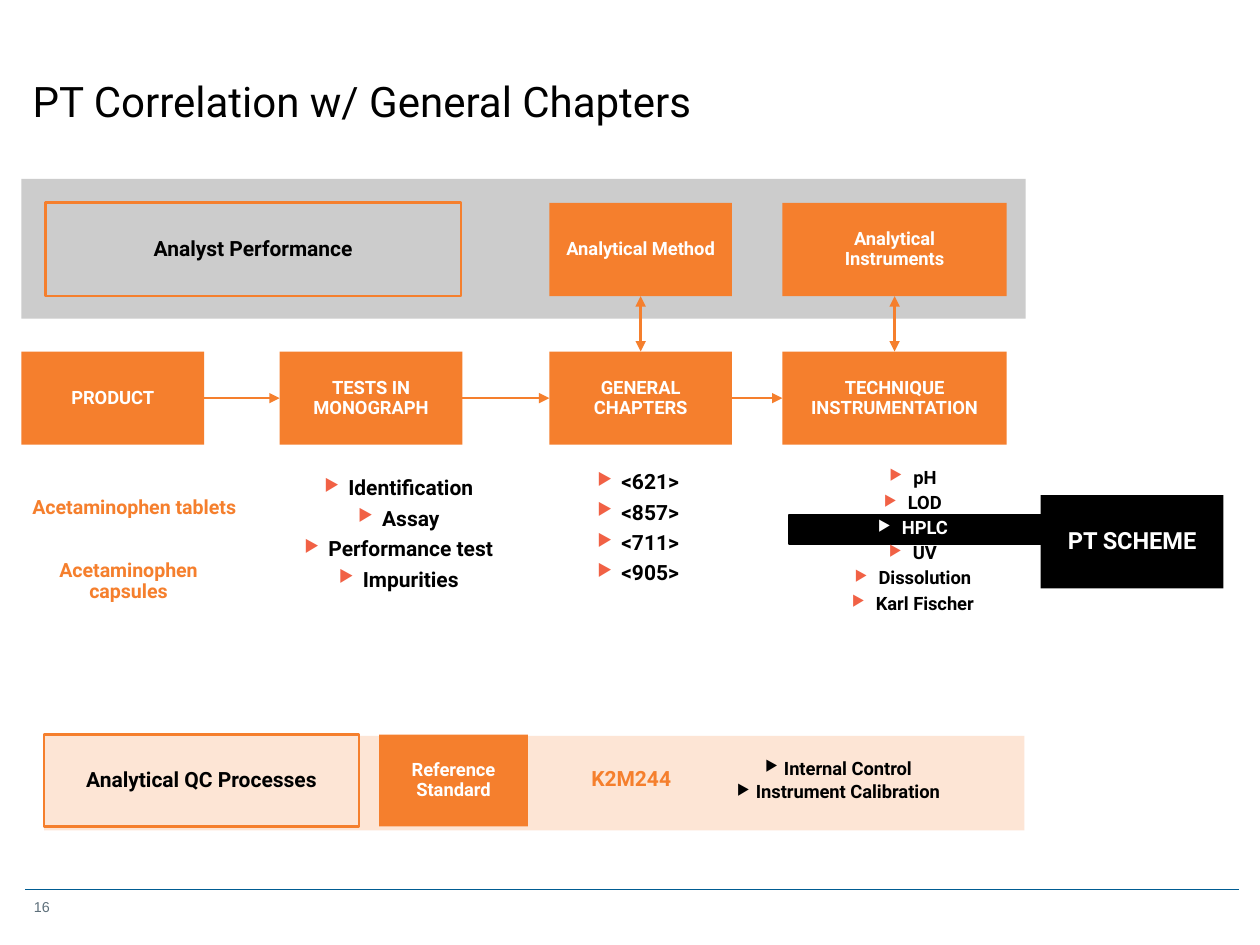
from itertools import pairwise

from pptx import Presentation, util as u
from pptx.dml.color import RGBColor
from pptx.enum import shapes, text
from pptx.oxml.ns import qn
from lxml import etree

ORANGE, CORAL, BLACK, WHITE = "F57F2D", "F16145", "000000", "FFFFFF"
TIGHT = (0.07, 0.04)
LOOSE = (0.1, 0.05)
TOP, LEFT, BOTTOM, RIGHT = range(4)


def rgb(value):
    return RGBColor.from_string(value)


def add_xml(parent, tag, **attrs):
    return etree.SubElement(parent, qn(tag), attrs)


class Deck:
    font = "Roboto"

    def __init__(self, prs):
        self.prs = prs
        self.s = prs.slides.add_slide(prs.slide_layouts[5])

    def frame(self, sp, inset, anchor, wrap=True):
        tf = sp.text_frame
        tf.word_wrap = wrap
        tf.vertical_anchor = anchor
        tf.margin_left = tf.margin_right = u.Inches(inset[0])
        tf.margin_top = tf.margin_bottom = u.Inches(inset[1])
        return tf

    def add_lines(self, tf, lines, size, color, bold=True, spacing=0.9,
                  align=text.PP_ALIGN.CENTER, font=None):
        for i, line in enumerate(lines):
            p = tf.paragraphs[0] if i == 0 else tf.add_paragraph()
            p.alignment = align
            p.line_spacing = spacing
            p.space_before = u.Pt(0)
            r = p.add_run()
            r.text = line
            r.font.name = font or self.font
            r.font.size = u.Pt(size)
            r.font.bold = bold
            r.font.color.rgb = rgb(color)

    def title(self, words, at):
        sp = self.s.shapes.title
        sp.left, sp.top, sp.width, sp.height = map(u.Inches, at)
        tf = self.frame(sp, LOOSE, text.MSO_ANCHOR.TOP)
        tf.auto_size = text.MSO_AUTO_SIZE.NONE
        self.add_lines(tf, [words], 24, BLACK, bold=False, spacing=1.0,
                       align=text.PP_ALIGN.LEFT)

    def box(self, at, lines=(), fill=None, line=None, width=1.5, size=10.5,
            color=WHITE, inset=TIGHT, wrap=True):
        sp = self.s.shapes.add_shape(shapes.MSO_SHAPE.RECTANGLE, *map(u.Inches, at))
        sp.shadow.inherit = False
        if fill:
            sp.fill.solid()
            sp.fill.fore_color.rgb = rgb(fill)
        else:
            sp.fill.background()
        if line:
            sp.line.color.rgb = rgb(line)
            sp.line.width = u.Pt(width)
        else:
            sp.line.fill.background()
        if lines:
            tf = self.frame(sp, inset, text.MSO_ANCHOR.MIDDLE, wrap)
            self.add_lines(tf, lines, size, color)
        return sp

    def label(self, at, words, size, color, anchor=text.MSO_ANCHOR.MIDDLE,
              inset=TIGHT, **style):
        sp = self.s.shapes.add_textbox(*map(u.Inches, at))
        self.add_lines(self.frame(sp, inset, anchor), [words], size, color, **style)

    def bullets(self, at, items, size, spacing=1.0, marker=CORAL, before=3,
                indent=(0.19, -0.19), anchor=text.MSO_ANCHOR.TOP, inset=LOOSE,
                highlight=None):
        sp = self.s.shapes.add_textbox(*map(u.Inches, at))
        tf = self.frame(sp, inset, anchor)
        self.add_lines(tf, items, size, BLACK, spacing=spacing)
        for i, (item, p) in enumerate(zip(items, tf.paragraphs)):
            p.space_before = u.Pt(before if i else 0)
            ppr = p._p.get_or_add_pPr()
            ppr.set("marL", str(u.Inches(indent[0])))
            ppr.set("indent", str(u.Inches(indent[1])))
            chosen = item == highlight
            add_xml(add_xml(ppr, "a:buClr"), "a:srgbClr", val=WHITE if chosen else marker)
            add_xml(ppr, "a:buSzPct", val="80000")
            add_xml(ppr, "a:buChar", char="▶")
            if chosen:
                p.runs[0].font.color.rgb = rgb(WHITE)

    def line(self, start, end, color, width):
        c = self.s.shapes.add_connector(
            shapes.MSO_CONNECTOR.STRAIGHT, *map(u.Inches, start + end))
        c.line.color.rgb = rgb(color)
        c.line.width = u.Pt(width)
        add_xml(c._element.spPr, "a:effectLst")
        return c

    def arrow(self, a, a_side, b, b_side, both=False):
        c = self.line((0, 0), (0, 0), ORANGE, 1.5)
        c.begin_connect(a, a_side)
        c.end_connect(b, b_side)
        ln = c._element.spPr.find(qn("a:ln"))
        if both:
            add_xml(ln, "a:headEnd", type="triangle")
        add_xml(ln, "a:tailEnd", type="triangle")


def main():
    prs = Presentation()
    prs.slide_width, prs.slide_height = u.Inches(10), u.Inches(7.5)
    d = Deck(prs)

    d.title("PT Correlation w/ General Chapters", (0.16, 0.55, 7.02, 0.52))
    d.line((0.2, 7.06), (9.83, 7.06), "005C92", 0.75)
    d.label((0.17, 7.08, 0.42, 0.24), "16", 8.2, "5E707B", text.MSO_ANCHOR.TOP,
            LOOSE, bold=False, spacing=1.0, align=text.PP_ALIGN.LEFT, font="Arial")

    d.box((0.35, 5.84, 7.78, 0.75), fill="FDE5D5")
    d.box((0.17, 1.42, 7.97, 1.11), fill="CCCCCC")

    height = 0.74
    columns = [(0.17, 1.45), (2.22, 1.45), (4.36, 1.45), (6.21, 1.78)]
    steps = [["PRODUCT"], ["TESTS IN MONOGRAPH"], ["GENERAL CHAPTERS"],
             ["TECHNIQUE", "INSTRUMENTATION"]]
    factors = [["Analytical Method"], ["Analytical", "Instruments"]]
    flow = [d.box((x, 2.79, w, height), lines, ORANGE)
            for (x, w), lines in zip(columns, steps)]
    upper = [d.box((x, 1.61, w, height), lines, ORANGE)
             for (x, w), lines in zip(columns[2:], factors)]
    for a, b in pairwise(flow):
        d.arrow(a, RIGHT, b, LEFT)
    for a, b in zip(upper, flow[2:]):
        d.arrow(a, BOTTOM, b, TOP, both=True)

    for at, heading in [((0.36, 1.61, 3.3, height), "Analyst Performance"),
                        ((0.35, 5.83, 2.5, 0.73), "Analytical QC Processes")]:
        d.box(at, [heading], line=ORANGE, size=12, color=BLACK, inset=LOOSE, wrap=False)

    d.label((0.17, 3.77, 1.79, 0.53), "Acetaminophen tablets", 11.2, ORANGE)
    d.label((0.16, 4.35, 1.72, 0.53), "Acetaminophen capsules", 11.2, ORANGE)
    d.bullets((2.12, 3.72, 2.09, 1.67),
              ["Identification", "Assay", "Performance test", "Impurities"], 12)
    d.bullets((4.46, 3.67, 1.21, 2.16), ["<621>", "<857>", "<711>", "<905>"], 12)

    d.box((6.26, 4.09, 2.97, 0.23), fill=BLACK, line=BLACK, width=1)
    d.box((8.26, 3.93, 1.45, height), ["PT SCHEME"], BLACK, size=13.5)
    d.bullets((6.5, 3.67, 1.49, 1.58),
              ["pH", "LOD", "HPLC", "UV", "Dissolution", "Karl Fischer"],
              10.5, spacing=0.9, highlight="HPLC")

    d.box((3.01, 5.83, 1.18, 0.73), ["Reference Standard"], ORANGE)
    d.label((4.42, 6.02, 1.18, 0.33), "K2M244", 12, ORANGE)
    d.bullets((5.5, 5.83, 2.23, height), ["Internal Control", "Instrument Calibration"],
              10.5, spacing=0.9, marker=BLACK, before=2.2, indent=(0.23, -0.15),
              anchor=text.MSO_ANCHOR.MIDDLE, inset=TIGHT)

    prs.save("out.pptx")


if __name__ == "__main__":
    main()
